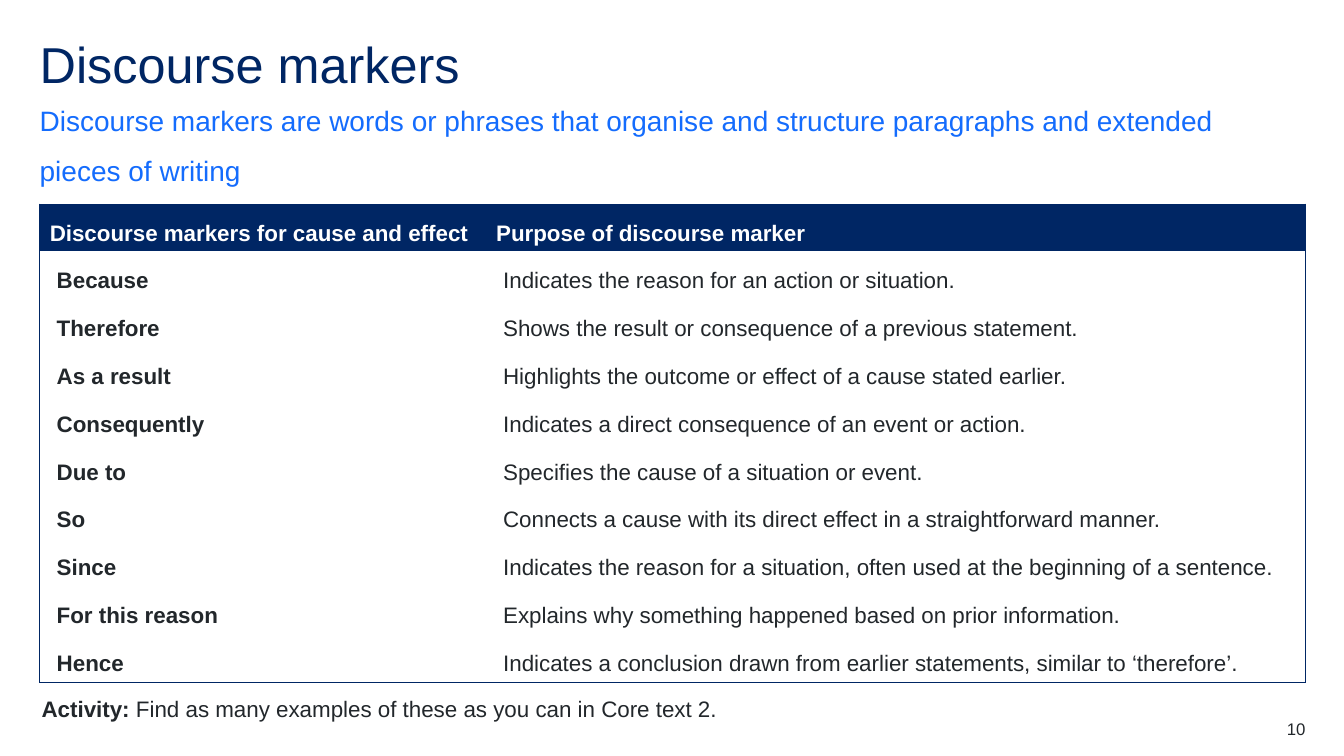
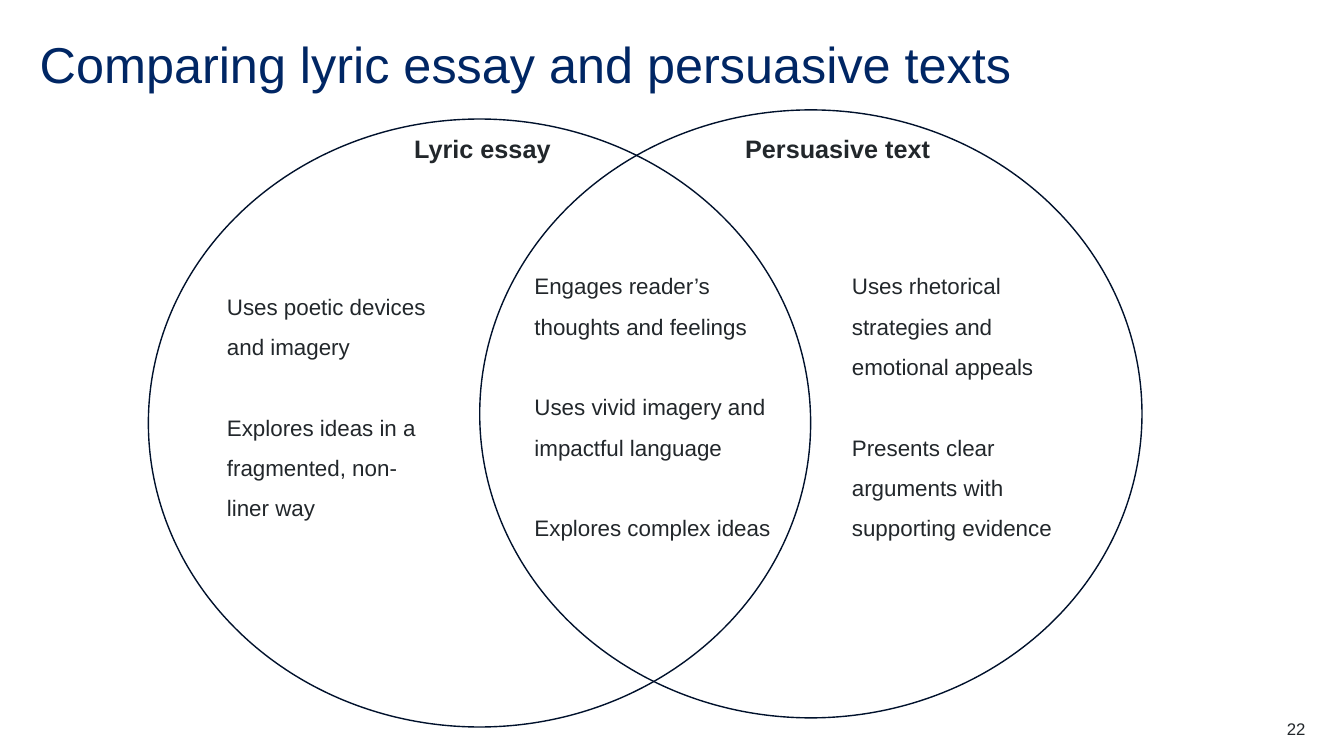
from lxml import etree
from pptx import Presentation
from pptx import util as u
from pptx.dml.color import RGBColor
from pptx.enum import shapes, text
from pptx.oxml import ns

Cm, Pt = u.Cm, u.Pt
COLORS = {"navy": "002664", "blue": "146CFD", "ink": "22272B",
          "outline": "00112C", "white": "FFFFFF"}
FONT = "Arial"


def color(name):
    return RGBColor.from_string(COLORS[name])


def write(frame, *paragraphs, size=16, ink="ink", bold=False, line=None, gap=0,
          before=0, after=0, align=text.PP_ALIGN.LEFT):
    """Fill a text frame; a paragraph is a string or a list of (text, bold) runs."""
    frame.word_wrap = True
    for index, content in enumerate(paragraphs):
        paragraph = frame.add_paragraph() if index else frame.paragraphs[0]
        paragraph.alignment = align
        paragraph.line_spacing = line
        paragraph.space_before = Pt(gap if index else before)
        paragraph.space_after = Pt(after)
        runs = [(content, bold)] if isinstance(content, str) else content
        for words, is_bold in runs:
            run = paragraph.add_run()
            run.text = words
            run.font.name = FONT
            run.font.size = Pt(size)
            run.font.bold = is_bold
            run.font.color.rgb = color(ink)


def set_borders(cell, visible):
    """Draw the cell sides listed in visible (L, R, T, B) and clear the others."""
    properties = cell._tc.get_or_add_tcPr()
    for side in "LRTB":
        border = etree.SubElement(properties, ns.qn(f"a:ln{side}"), w=str(Pt(0.5)))
        if side in visible:
            fill = etree.SubElement(border, ns.qn("a:solidFill"))
            etree.SubElement(fill, ns.qn("a:srgbClr"), val=COLORS["navy"])
        else:
            etree.SubElement(border, ns.qn("a:noFill"))


class Deck:
    """Holds the shared style and the current slide."""

    margin, content_width = 1, 31.9

    def __init__(self):
        self.presentation = Presentation()
        self.presentation.slide_width = Cm(33.87)
        self.presentation.slide_height = Cm(19.05)
        self.slide = None

    def add_slide(self, title, number):
        self.slide = self.presentation.slides.add_slide(self.presentation.slide_layouts[6])
        self.add_text(self.margin, 1, self.content_width, 1.52, title,
                      size=36, ink="navy", line=0.9)
        self.add_text(30.9, 18.11, 2, 0.51, str(number), size=12,
                      align=text.PP_ALIGN.RIGHT)

    def add_text(self, left, top, width, height, *paragraphs,
                 anchor=text.MSO_ANCHOR.TOP, **style):
        frame = self.slide.shapes.add_textbox(
            Cm(left), Cm(top), Cm(width), Cm(height)).text_frame
        frame.margin_left = frame.margin_right = 0
        frame.margin_top = frame.margin_bottom = 0
        frame.vertical_anchor = anchor
        write(frame, *paragraphs, **style)

    def add_circle(self, left, top, width, height, fill=None):
        shape = self.slide.shapes.add_shape(
            shapes.MSO_SHAPE.OVAL, Cm(left), Cm(top), Cm(width), Cm(height))
        shape.shadow.inherit = False
        if fill:
            shape.fill.solid()
            shape.fill.fore_color.rgb = color(fill)
        else:
            shape.fill.background()
        shape.line.color.rgb = color("outline")
        shape.line.width = Pt(1)

    def add_table(self, top, height, column_widths, rows):
        graphic = self.slide.shapes.add_table(
            len(rows), len(column_widths), Cm(self.margin), Cm(top),
            Cm(sum(column_widths)), Cm(height))
        table = graphic.table
        table.horz_banding = False
        for column, width in zip(table.columns, column_widths):
            column.width = Cm(width)
        for row in table.rows:
            row.height = Cm(0.53)  # rows grow to fit their text
        graphic.height = Cm(height)

        for row_index, row in enumerate(rows):
            is_header = row_index == 0
            for column_index, words in enumerate(row):
                cell = table.cell(row_index, column_index)
                sides = "L" if column_index == 0 else "R"
                sides += "T" if is_header else ""
                sides += "B" if row_index == len(rows) - 1 else ""
                set_borders(cell, sides)
                if is_header:
                    cell.fill.solid()
                    cell.fill.fore_color.rgb = color("navy")
                    cell.margin_bottom = Cm(0.05)
                    write(cell.text_frame, words, ink="white", bold=True,
                          line=1.5, before=12, after=6)
                else:
                    cell.fill.background()
                    cell.margin_left = cell.margin_right = Cm(0.43)
                    cell.margin_top, cell.margin_bottom = Cm(0.08), Cm(0.11)
                    cell.vertical_anchor = text.MSO_ANCHOR.MIDDLE
                    write(cell.text_frame, words, bold=column_index == 0, line=1.5)


MARKERS = [
    ("Discourse markers for cause and effect", "Purpose of discourse marker"),
    ("Because", "Indicates the reason for an action or situation."),
    ("Therefore", "Shows the result or consequence of a previous statement."),
    ("As a result", "Highlights the outcome or effect of a cause stated earlier."),
    ("Consequently", "Indicates a direct consequence of an event or action."),
    ("Due to", "Specifies the cause of a situation or event."),
    ("So", "Connects a cause with its direct effect in a straightforward manner."),
    ("Since", "Indicates the reason for a situation, often used at the beginning of a sentence."),
    ("For this reason", "Explains why something happened based on prior information."),
    ("Hence", "Indicates a conclusion drawn from earlier statements, similar to ‘therefore’."),
]

# Left edge, width and points of each region of the Venn diagram
VENN_REGIONS = [
    (5.72, 5.31, ["Uses poetic devices and imagery",
                  "Explores ideas in a fragmented, non-liner way"]),
    (13.47, 6.38, ["Engages reader’s thoughts and feelings",
                   "Uses vivid imagery and impactful language",
                   "Explores complex ideas"]),
    (21.47, 5.49, ["Uses rhetorical strategies and emotional appeals",
                   "Presents clear arguments with supporting evidence"]),
]


def add_markers_slide(deck):
    deck.add_slide("Discourse markers", 10)
    deck.add_text(deck.margin, 3.86, 30.6, 0.86,
                  "Discourse markers are words or phrases that organise and structure "
                  "paragraphs and extended pieces of writing",
                  anchor=text.MSO_ANCHOR.BOTTOM, size=20, ink="blue", line=1.5, after=12)
    deck.add_table(5.14, 11.53, (11.25, 20.65), MARKERS)
    deck.add_text(1.05, 17.52, 29.9, 0.81,
                  [("Activity: ", True),
                   ("Find as many examples of these as you can in Core text 2.", False)])


def add_venn_slide(deck):
    deck.add_slide("Comparing lyric essay and persuasive texts", 22)
    # Overlapping circles
    deck.add_circle(3.74, 3, 16.69, 15.32, fill="white")
    deck.add_circle(12.09, 2.77, 16.69, 15.32)
    # Headings
    for left, heading in ((10.44, "Lyric essay"), (18.78, "Persuasive text")):
        deck.add_text(left, 3.35, 6.88, 2.11, heading, size=18, bold=True)
    # Points in each region
    for left, width, points in VENN_REGIONS:
        deck.add_text(left, 7.42, width, 5.33, *points,
                      anchor=text.MSO_ANCHOR.MIDDLE, line=1.5, gap=28.8)


def main():
    deck = Deck()
    add_markers_slide(deck)
    add_venn_slide(deck)
    deck.presentation.save("out.pptx")


if __name__ == "__main__":
    main()
